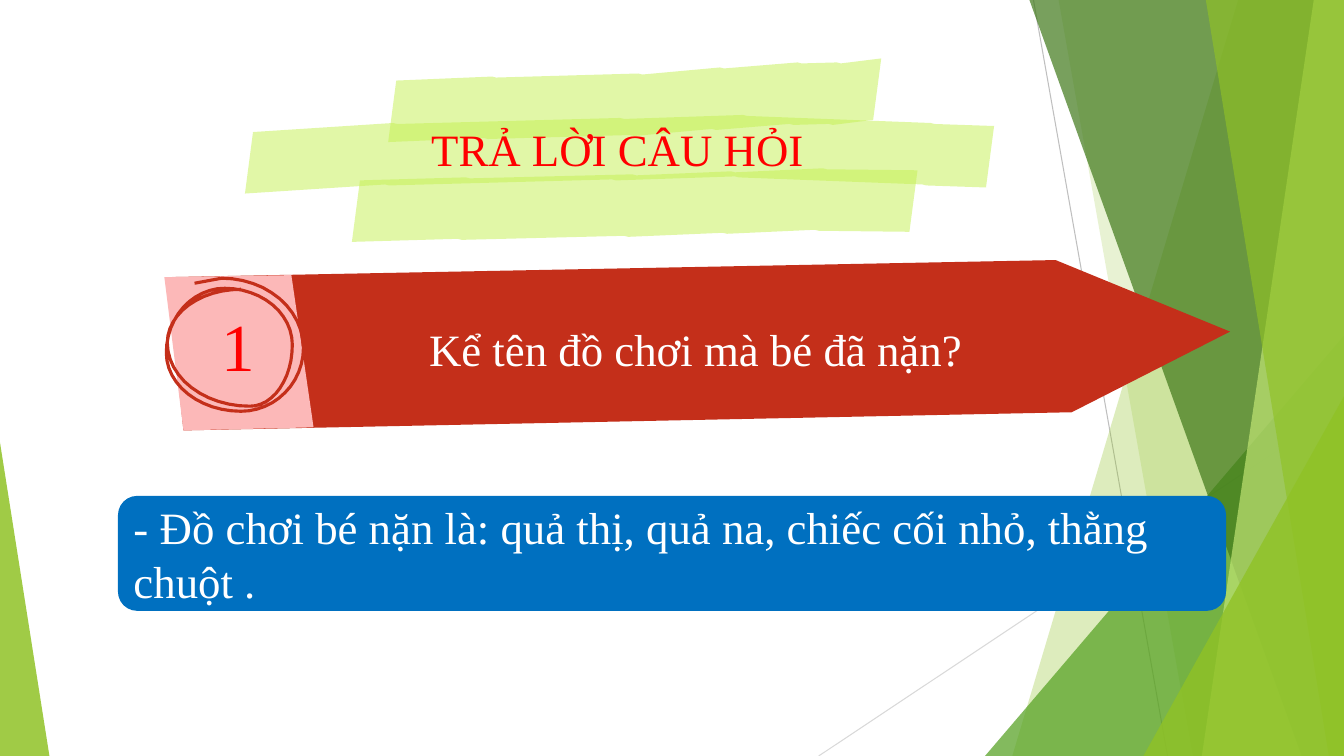
"""Build the question slide with its faceted backdrop, brush title, banner and answer."""
from math import cos, pi, sin
from itertools import pairwise
from lxml.etree import SubElement
from pptx import Presentation
from pptx.dml.color import RGBColor
from pptx.enum.shapes import MSO_CONNECTOR as Connector, MSO_SHAPE as Shape
from pptx.enum.text import MSO_ANCHOR as Anchor, MSO_AUTO_SIZE as AutoSize, PP_ALIGN as Align
from pptx.oxml.ns import qn
from pptx.util import Inches, Pt

CELL = Inches(0.01)
COLUMNS, ROWS = 1333, 750
FINE = 10
FONT = "Times New Roman"
LIME, LEAF, FOREST, PALE = "90C226", "54A021", "3F7819", "C0E474"
BRUSH, BRICK, PINK = "C4F150", "C42F1A", "FCB8B8"
RED, BLUE, WHITE = "FF0000", "0070C0", "FFFFFF"


def tint(fill, color):
    fill.solid()
    fill.fore_color.rgb = RGBColor.from_string(color)


def trace(points, close=True):
    fine = [(x * FINE, y * FINE) for x, y in points]
    builder = page.shapes.build_freeform(*fine[0], scale=CELL / FINE)
    builder.add_line_segments(fine[1:], close=close)
    return builder.convert_to_shape()


deck = Presentation()
deck.slide_width, deck.slide_height = COLUMNS * CELL, ROWS * CELL
page = deck.slides.add_slide(deck.slide_layouts[5])

for start, end, color in [
    ((1025, 0), (1158, ROWS), "BFBFBF"),
    ((COLUMNS, 403), (812, ROWS), "D9D9D9"),
]:
    ray = page.shapes.add_connector(
        Connector.STRAIGHT, *(cells * CELL for cells in start + end))
    tint(ray.line.fill, color)
    ray.line.width = Pt(0.75)
    SubElement(ray.element.spPr, qn("a:effectLst"))

# Bands reach the right edge; peaks rise from the bottom edge.
facets = [
    ("band", 1228, 1004, LIME, 30),
    ("band", 1050, 1183, LIME, 20),
    ("right peak", 977, 333, LEAF, 72),
    ("band", 1021, 1291, FOREST, 70),
    ("band", 1303, 1192, PALE, 70),
    ("band", 1196, 1318, LIME, 65),
    ("right peak", 1134, 393, LIME, 80),
    ("left peak", 49, 439, LIME, 85),
]
areas = []
for kind, first, second, color, opacity in facets:
    if kind == "band":
        corners = [(first, 0), (COLUMNS, 0), (COLUMNS, ROWS), (second, ROWS)]
        facet = trace(corners)
    else:
        on_right = kind == "right peak"
        left, right = (first, COLUMNS) if on_right else (0, first)
        facet = page.shapes.add_shape(
            Shape.ISOSCELES_TRIANGLE, left * CELL, second * CELL,
            (right - left) * CELL, (ROWS - second) * CELL)
        facet.adjustments[0] = int(on_right)
    areas.append((facet, color, opacity))

# A stroke is its upper edge, then the same edge shifted and walked backwards.
STROKE_SHIFT, STROKE_DEPTH = -8, 61
NOTCH_WIDTH, NOTCH_DEPTH = 4, 1
middle_edge = [(251, 131), (390, 122), (615, 117), (737, 114), (923, 122), (986, 125)]
lower_edge = [(357, 179), (462, 176), (627, 173), (725, 170), (816, 167), (910, 169)]
upper_edge = [(393, 80), (488, 76), (633, 73), (714, 67), (791, 62), (830, 62), (874, 58)]
for edge in (middle_edge, lower_edge, upper_edge):
    ragged = [edge[0]]
    for x, y in edge[1:-1]:
        ragged += [(x, y), (x + NOTCH_WIDTH, y + NOTCH_DEPTH)]
    ragged.append(edge[-1])
    underside = [(x + STROKE_SHIFT, y + STROKE_DEPTH) for x, y in reversed(ragged)]
    areas.append((trace(ragged + underside), BRUSH, 50))

banner = [(182, 427), (1063, 409), (1220, 329), (1047, 258), (166, 275)]
number_tile = [(311, 424), (182, 427), (163, 275), (289, 273)]
areas += [(trace(banner), BRICK, 100), (trace(number_tile), PINK, 100)]

# Quarter ellipses join the scribble's extremes: top, left, bottom, right, and again.
ARC_STEPS = 12
extremes = [
    (239, 287), (166, 340), (248, 403), (290, 342),
    (223, 286), (165, 350), (239, 408), (301, 345), (220, 276),
]
scribble_end = (193, 281)
scribble_points = [extremes[0]]
for quarter, ((x0, y0), (x1, y1)) in enumerate(pairwise(extremes)):
    for step in range(1, ARC_STEPS + 1):
        angle = step / ARC_STEPS * pi / 2
        early, late = sin(angle), 1 - cos(angle)
        across, down = (early, late) if quarter % 2 == 0 else (late, early)
        scribble_points.append((x0 + (x1 - x0) * across, y0 + (y1 - y0) * down))
scribble_points.append(scribble_end)
scribble = trace(scribble_points, close=False)
scribble.shadow.inherit = False
scribble.fill.background()
tint(scribble.line.fill, BRICK)
scribble.line.width = Pt(2.25)

title = page.shapes.title
page.shapes.element.append(title.element)
question = page.shapes.add_textbox(0, 0, CELL, CELL)
number = page.shapes.add_textbox(0, 0, CELL, CELL)
answer = page.shapes.add_shape(Shape.ROUNDED_RECTANGLE, 0, 0, CELL, CELL)
areas.append((answer, BLUE, 100))

for area, color, opacity in areas:
    area.shadow.inherit = False
    area.line.fill.background()
    tint(area.fill, color)
    if opacity < 100:
        tone = area.element.spPr.find(qn("a:solidFill")).find(qn("a:srgbClr"))
        SubElement(tone, qn("a:alpha"), val=str(opacity * 1000))

WIDE, NARROW = (13, 13), (10, 5)
for box, place, words, size, color, align, anchor, (side, end) in [
    (title, (226, 69, 773, 118), "TRẢ LỜI CÂU HỎI", 32, RED,
     Align.CENTER, Anchor.BOTTOM, WIDE),
    (question, (296, 306, 788, 83), "Kể tên đồ chơi mà bé đã nặn?", 32, WHITE,
     Align.CENTER, Anchor.TOP, WIDE),
    (number, (198, 297, 77, 91), "1", 48, RED, Align.CENTER, Anchor.TOP, NARROW),
    (answer, (117, 492, 1099, 114),
     "- Đồ chơi bé nặn là: quả thị, quả na, chiếc cối nhỏ, thằng chuột .", 32, WHITE,
     Align.LEFT, Anchor.MIDDLE, NARROW),
]:
    box.left, box.top, box.width, box.height = (cells * CELL for cells in place)
    frame = box.text_frame
    frame.text = words
    frame.word_wrap = True
    frame.auto_size = AutoSize.NONE
    frame.vertical_anchor = anchor
    frame.margin_left = frame.margin_right = side * CELL
    frame.margin_top = frame.margin_bottom = end * CELL
    para = frame.paragraphs[0]
    para.alignment = align
    span = para.runs[0]
    span.font.name = FONT
    span.font.size = Pt(size)
    tint(span.font.fill, color)

deck.save("out.pptx")
